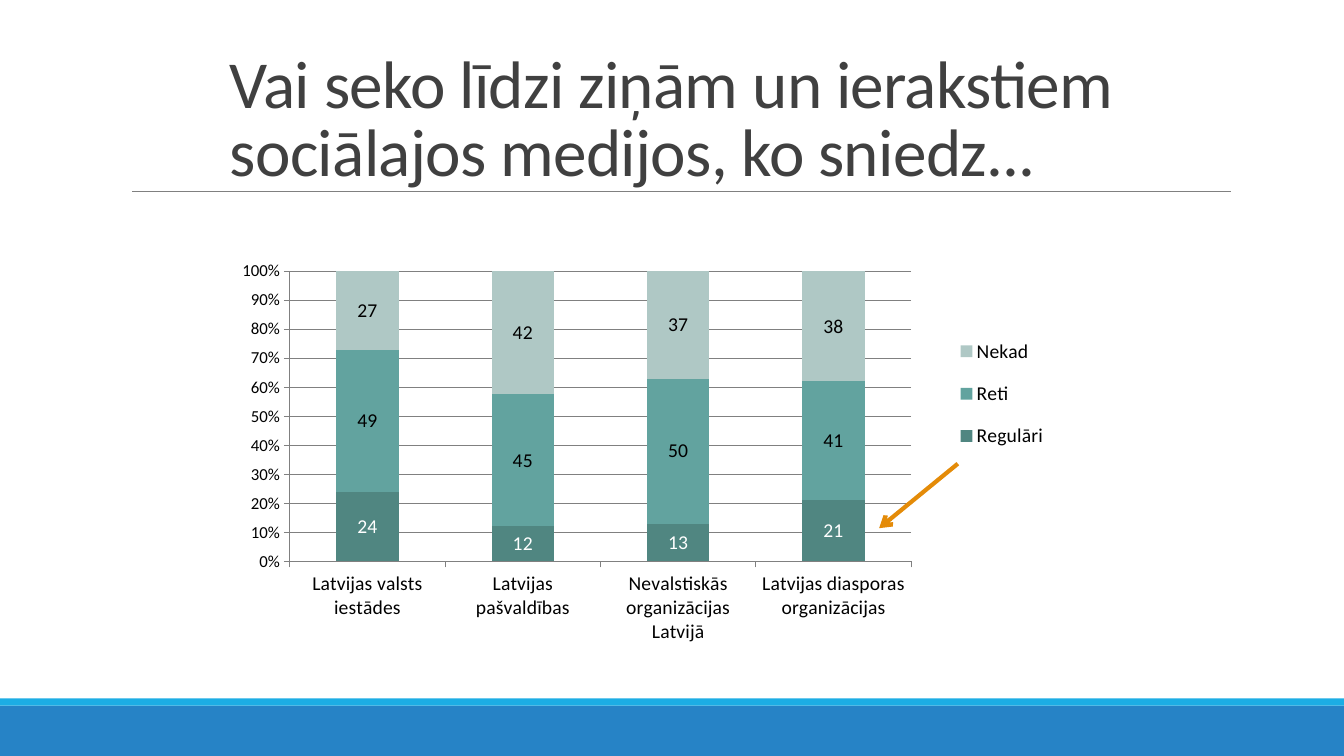
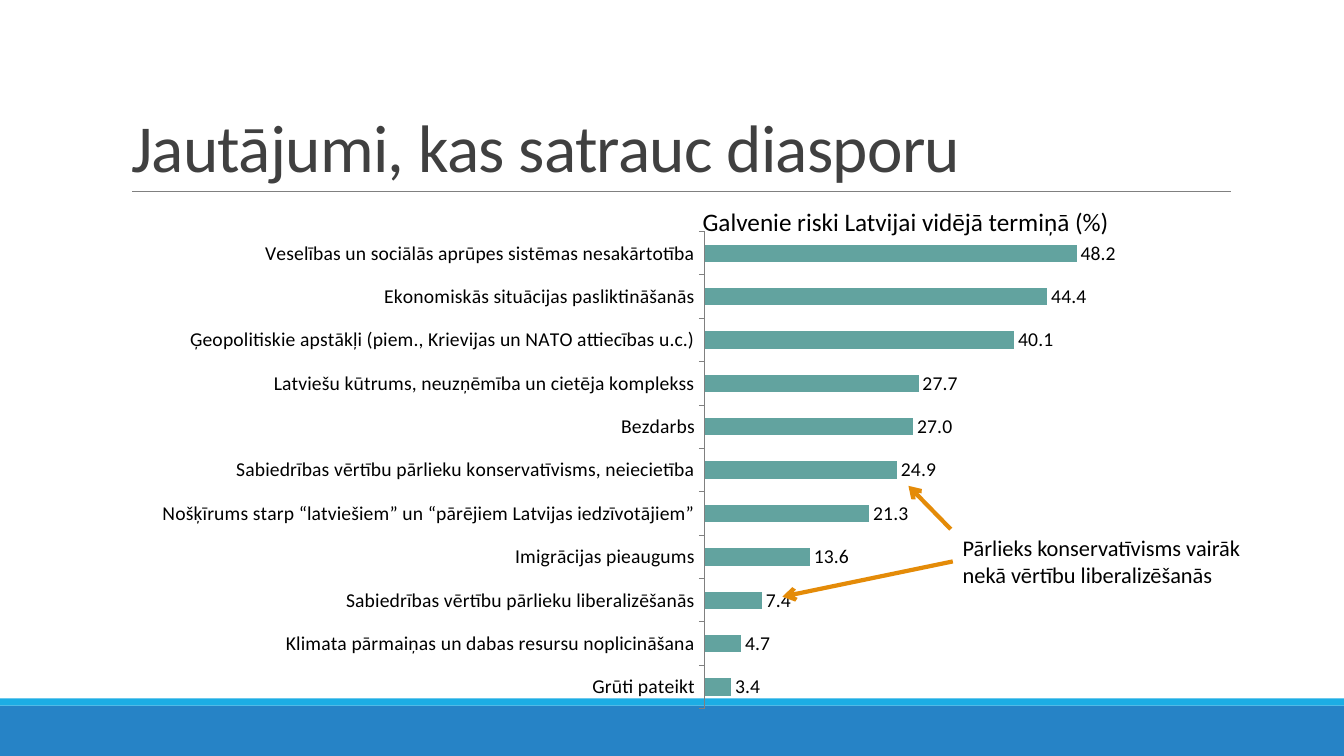
from lxml.etree import SubElement as Sub
from pptx import Presentation
from pptx.chart.data import CategoryChartData as Data
from pptx.dml.color import RGBColor as RGB
from pptx.enum.chart import XL_CHART_TYPE as Kind, XL_LABEL_POSITION as Spot
from pptx.enum.chart import XL_LEGEND_POSITION as Side, XL_TICK_MARK as Tick
from pptx.enum.shapes import MSO_CONNECTOR as Line, MSO_SHAPE as Form
from pptx.enum.text import MSO_ANCHOR as Anchor, MSO_AUTO_SIZE as Fit, PP_ALIGN as Align
from pptx.oxml import parse_xml
from pptx.oxml.ns import nsdecls, qn
from pptx.util import Pt

SCALE = 9144
WIDE, HIGH = 1333, 750
FONT = "Calibri"
BLACK, WHITE, INK, GREY = "000000", "FFFFFF", "404040", "808080"
BLUE, CYAN, GOLD = "2683C6", "1CADE4", "E48B08"
DARK, TEAL, PALE = "508681", "62A39F", "AFC8C5"

GROUPS = ["Latvijas valsts iestādes", "Latvijas pašvaldības",
          "Nevalstiskās organizācijas Latvijā", "Latvijas diasporas organizācijas"]
HABITS = [("Regulāri", [24, 12, 13, 21], DARK, WHITE),
          ("Reti", [49, 45, 50, 41], TEAL, BLACK),
          ("Nekad", [27, 42, 37, 38], PALE, BLACK)]
RISKS = {
    "Grūti pateikt": 3.4,
    "Klimata pārmaiņas un dabas resursu noplicināšana": 4.7,
    "Sabiedrības vērtību pārlieku liberalizēšanās": 7.4,
    "Imigrācijas pieaugums": 13.6,
    "Nošķīrums starp “latviešiem” un “pārējiem Latvijas iedzīvotājiem”": 21.3,
    "Sabiedrības vērtību pārlieku konservatīvisms, neiecietība": 24.9,
    "Bezdarbs": 27,
    "Latviešu kūtrums, neuzņēmība un cietēja komplekss": 27.7,
    "Ģeopolitiskie apstākļi (piem., Krievijas un NATO attiecības u.c.)": 40.1,
    "Ekonomiskās situācijas pasliktināšanās": 44.4,
    "Veselības un sociālās aprūpes sistēmas nesakārtotība": 48.2,
}


def px(*nums):
    """Turn px lengths into EMU."""
    return [num * SCALE for num in nums]


def tint(color):
    """Turn a hex string into a colour."""
    return RGB.from_string(color)


def put(item, **vals):
    """Set each given attribute on an item."""
    for name, val in vals.items():
        setattr(item, name, val)


def ink(font, size, color=BLACK):
    """Style a font."""
    put(font, name=FONT, size=Pt(size))
    font.color.rgb = tint(color)


def paint(fill, color):
    """Fill with one solid colour."""
    fill.solid()
    fill.fore_color.rgb = tint(color)


def stroke(line, color, width):
    """Style a line."""
    line.color.rgb = tint(color)
    line.width = Pt(width)


def band(slide, box, color):
    """Draw a plain filled strip."""
    strip = slide.shapes.add_shape(Form.RECTANGLE, *px(*box))
    paint(strip.fill, color)
    strip.line.fill.background()
    strip.shadow.inherit = False
    return strip


def rule(slide, ends, color, width):
    """Draw a straight line without shadow."""
    line = slide.shapes.add_connector(Line.STRAIGHT, *px(*ends))
    stroke(line.line, color, width)
    Sub(line.element.spPr, qn("a:effectLst"))
    return line


def arrow(slide, ends):
    """Draw a gold pointer."""
    line = rule(slide, ends, GOLD, 3)
    Sub(line.element.spPr.find(qn("a:ln")), qn("a:tailEnd"), type="arrow")
    return line


def share(slide):
    """Move the common bands and title rule to the layout."""
    parts = [band(slide, (0, 700, WIDE, 50), BLUE),
             band(slide, (0, 693, WIDE, 7), CYAN),
             rule(slide, (131, 190, 1221, 190), GREY, 0.5)]
    for part in parts:
        slide.slide_layout.shapes.element.append(part.element)


def head(slide, text, box):
    """Place and style the title."""
    title = slide.shapes.title
    put(title, **dict(zip(("left", "top", "width", "height"), px(*box))))
    frame = title.text_frame
    put(frame, text=text, word_wrap=True, auto_size=Fit.NONE,
        vertical_anchor=Anchor.BOTTOM)
    para = frame.paragraphs[0]
    put(para, alignment=Align.LEFT, line_spacing=0.85)
    run = para.runs[0]
    ink(run.font, 48, INK)
    run.font._element.set("spc", "-50")


def note(slide, text, box, size):
    """Add a text box, one paragraph a line."""
    area = slide.shapes.add_textbox(*px(*box))
    put(area.text_frame, text=text, word_wrap=False, auto_size=Fit.SHAPE_TO_FIT_TEXT)
    for para in area.text_frame.paragraphs:
        ink(para.runs[0].font, size)
    return area


def pin(part, index, box, inner=""):
    """Fix a chart part at fractions of the chart area."""
    for old in part.findall(qn("c:layout")):
        part.remove(old)
    modes = "".join(f'<c:{key}Mode val="edge"/>' for key in "xy")
    sizes = "".join(f'<c:{key} val="{val}"/>' for key, val in zip("xywh", box))
    part.insert(index, parse_xml(
        f'<c:layout {nsdecls("c")}><c:manualLayout>{inner}{modes}{sizes}'
        '</c:manualLayout></c:layout>'))


def graph(slide, kind, box, area, cats, rows, mask, spot):
    """Add a bar chart with styled series and labels."""
    data = Data()
    data.categories = cats
    for name, vals, *_ in rows:
        data.add_series(name, vals)
    chart = slide.shapes.add_chart(kind, *px(*box), data).chart
    put(chart, has_title=False, has_legend=False)
    ink(chart.font, 14)
    plot = chart.plots[0]
    put(plot, gap_width=150, vary_by_categories=False)
    for series, (_, _, color, text) in zip(plot.series, rows):
        paint(series.format.fill, color)
        tags = series.data_labels
        put(tags, show_value=True, number_format=mask,
            number_format_is_linked=False, position=spot)
        ink(tags.font, 14, text)
    axis = chart.category_axis
    put(axis, major_tick_mark=Tick.OUTSIDE, has_major_gridlines=False)
    stroke(axis.format.line, GREY, 0.75)
    ink(axis.tick_labels.font, 14)
    pin(chart.element.find(".//" + qn("c:plotArea")), 0, area,
        '<c:layoutTarget val="inner"/>')
    return chart


def news(slide):
    """Build the slide on following the news."""
    head(slide, "Vai seko līdzi ziņām un ierakstiem sociālajos medijos, ko sniedz...",
         (218, 13, 907, 181))
    chart = graph(slide, Kind.COLUMN_STACKED_100, (219, 224, 856, 450),
                  (0.08, 0.1, 0.72, 0.64), GROUPS, HABITS, "0", Spot.CENTER)
    chart.plots[0].overlap = 100
    axis = chart.value_axis
    put(axis, major_tick_mark=Tick.OUTSIDE, has_major_gridlines=True)
    put(axis.tick_labels, number_format="0%", number_format_is_linked=False)
    ink(axis.tick_labels.font, 12)
    for part in (axis, axis.major_gridlines):
        stroke(part.format.line, GREY, 0.75)
    chart.has_legend = True
    put(chart.legend, position=Side.RIGHT, include_in_layout=False)
    ink(chart.legend.font, 14)
    pin(chart.element.find(".//" + qn("c:legend")), 1, (0.84, 0.21, 0.13, 0.32))
    arrow(slide, (950, 460, 872, 524))


def risks(slide):
    """Build the slide on the main risks."""
    head(slide, "Jautājumi, kas satrauc diasporu", (120, 31, 1100, 159))
    rows = [("Series 1", list(RISKS.values()), TEAL, BLACK)]
    chart = graph(slide, Kind.BAR_CLUSTERED, (136, 220, 1043, 493),
                  (0.54, 0.02, 0.44, 0.96), list(RISKS), rows, "0.0", Spot.OUTSIDE_END)
    put(chart.value_axis, visible=False, has_major_gridlines=False,
        minimum_scale=0, maximum_scale=60)
    note(slide, "Galvenie riski Latvijai vidējā termiņā (%)", (687, 200, 428, 40), 18)
    arrow(slide, (943, 525, 901, 482))
    low = arrow(slide, (943, 553, 776, 592))
    text = note(slide, "Pārlieks konservatīvisms vairāk\nnekā vērtību liberalizēšanās",
                (945, 525, 304, 64), 16)
    low.begin_connect(text, 1)


def main():
    """Build and save the deck."""
    deck = Presentation()
    put(deck, **dict(zip(("slide_width", "slide_height"), px(WIDE, HIGH))))
    first, second = [deck.slides.add_slide(deck.slide_layouts[5]) for _ in range(2)]
    share(first)
    news(first)
    risks(second)
    deck.save("out.pptx")


if __name__ == "__main__":
    main()
